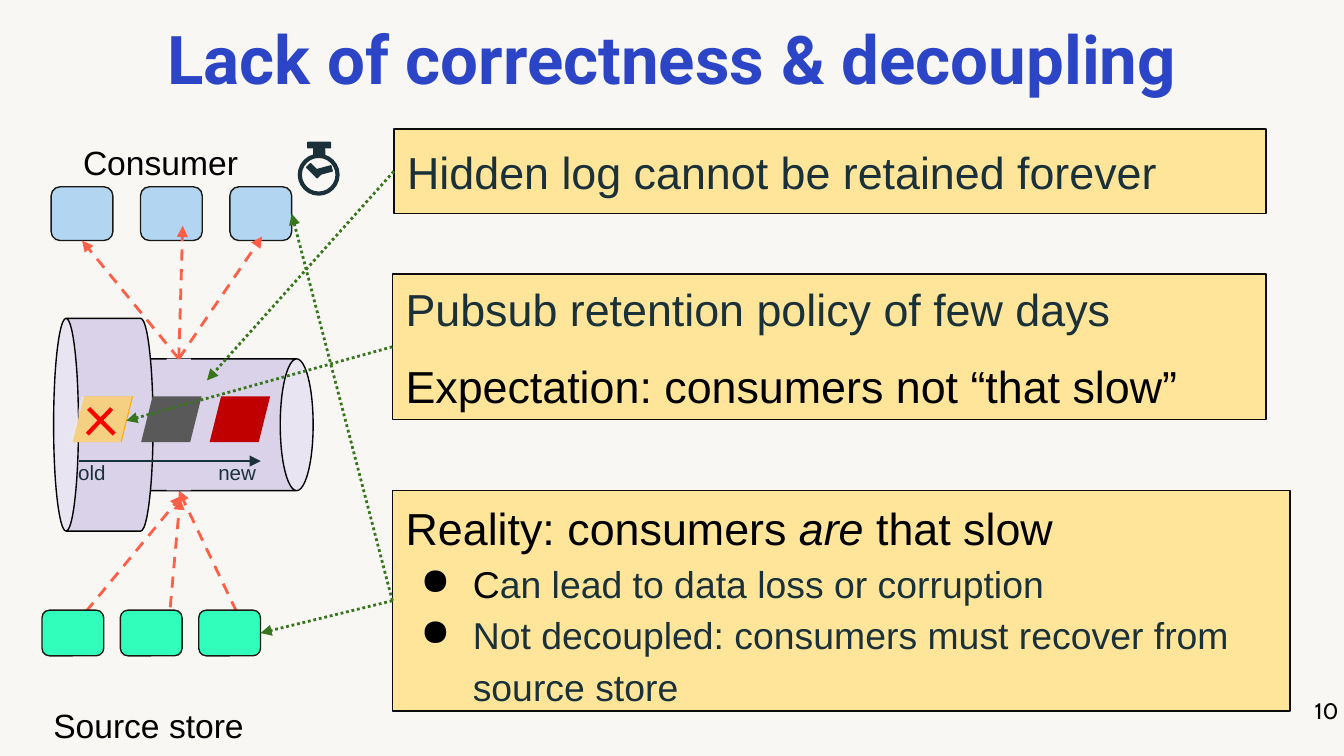
"""Build a slide on the missing correctness and decoupling of a pubsub log."""
from lxml.etree import SubElement
from pptx import Presentation
from pptx.dml.color import RGBColor
from pptx.enum.dml import MSO_LINE_DASH_STYLE as DASH
from pptx.enum.shapes import MSO_CONNECTOR, MSO_SHAPE as SHAPE
from pptx.enum.text import MSO_ANCHOR as ANCHOR, PP_ALIGN as ALIGN
from pptx.oxml.ns import qn
from pptx.util import Pt

PAPER = RGBColor(0xF9, 0xF7, 0xF4)
BLUE = RGBColor(0x2C, 0x45, 0xC6)
BLACK = RGBColor(0, 0, 0)
NAVY = RGBColor(0x1B, 0x31, 0x39)
OUTLINE = RGBColor(0x1A, 0x19, 0x14)
BOX_LINE = RGBColor(0x0C, 0x0C, 0x0C)
YELLOW = RGBColor(0xFF, 0xE5, 0x99)
SKY = RGBColor(0xB2, 0xD5, 0xF2)
MINT = RGBColor(0x32, 0xFE, 0xBC)
LILAC = RGBColor(0xD9, 0xD2, 0xE9)
CORAL = RGBColor(0xFF, 0x5F, 0x46)
GREEN = RGBColor(0x38, 0x76, 0x1D)
RED = RGBColor(0xFF, 0, 0)
VEIL = RGBColor(0xEE, 0xED, 0xE9)
RECORD_FILLS = [RGBColor(0xFF, 0xAB, 0), RGBColor(0x59, 0x59, 0x59), RGBColor(0xC0, 0, 0)]

HEAD = dict(size=Pt(24))
ITEM = dict(size=Pt(20))
TITLE = [dict(runs=[("Lack of correctness & decoupling",
                     dict(name="Roboto", size=Pt(36), bold=True, color=BLUE))],
              format=dict(alignment=ALIGN.CENTER, line_spacing=0.9))]
NOTES = [
    ((211, 69.1, 467.3, 45.4), [
        dict(runs=[("Hidden log cannot be retained forever", HEAD | dict(color=NAVY))])]),
    ((210.2, 146.9, 468, 77.8), [
        dict(runs=[("Pubsub retention policy of few days", HEAD | dict(color=NAVY))]),
        dict(runs=[("Expectation: consumers not “that slow”", HEAD)],
             format=dict(line_spacing=1.15, space_before=Pt(8)))]),
    ((210.2, 262.8, 481, 118.1), [
        dict(runs=[("Reality: consumers ", HEAD), ("are ", HEAD | dict(italic=True)),
                   ("that slow", HEAD)], format=dict(line_spacing=1.15)),
        dict(runs=[("C", ITEM), ("an lead to data loss or corruption", ITEM | dict(color=NAVY))],
             format=dict(line_spacing=1.15), bullet=True),
        dict(runs=[("Not decoupled: consumers must recover from source store",
                    ITEM | dict(color=NAVY))],
             format=dict(line_spacing=1.15), bullet=True)]),
]
LABELS = [
    ("Consumer", (1.4, 69.1, 169.2, 28.8), 3.6, dict(size=Pt(18)), 1.15),
    ("Source store", (0.7, 370.8, 157.7, 28.8), 3.6, dict(size=Pt(18)), 1.15),
    ("old", (12.2, 239.8, 74.2, 28.1), 7.2, dict(size=Pt(11), color=NAVY), 1),
    ("new", (90, 239.8, 74.2, 28.1), 7.2, dict(size=Pt(11), color=NAVY), 1),
]
PUBLISH_ARROWS = [((89.3, 346.3), (96.5, 267.1)), ((46.1, 327.6), (97.2, 265.7)),
                  ((126.7, 327.6), (95.8, 262.8))]
DELIVER_FROM = (95.8, 192.2)
DELIVER_TO = [(43.9, 129.6), (97.9, 121), (140.4, 126.7)]
CANS = [((84.2, 179.3, 70.6, 96.5), 90), ((-1.6, 200.9, 114, 53.3), 270)]
STOPWATCH_PARTS = [((168.8, 90, 9, 2.9), 344.9), ((164.2, 90, 7.9, 2.9), 224.6),
                   ((164.9, 76.3, 12.2, 2.9), 359.8), ((168.5, 77.8, 5, 5.8), 269.7)]
CROSS = [((47.5, 218.9), (61.2, 232.6)), ((59.8, 218.9), (46.8, 232.6))]

presentation = Presentation()
presentation.slide_width, presentation.slide_height = Pt(720), Pt(405)
slide = presentation.slides.add_slide(presentation.slide_layouts[5])
slide.background.fill.solid()
slide.background.fill.fore_color.rgb = PAPER


def add_shape(kind, frame, fill=None, line=None, width=0.75, rotation=0):
    shape = slide.shapes.add_shape(kind, *map(Pt, frame))
    shape.shadow.inherit = False
    shape.rotation = rotation
    if fill is None:
        shape.fill.background()
    else:
        shape.fill.solid()
        shape.fill.fore_color.rgb = fill
    if line is None:
        shape.line.fill.background()
    else:
        shape.line.color.rgb, shape.line.width = line, Pt(width)
    return shape


def add_line(start, end, color, width=1.5, dash=None, arrow=True):
    line = slide.shapes.add_connector(MSO_CONNECTOR.STRAIGHT, *map(Pt, start + end))
    line.line.color.rgb, line.line.width = color, Pt(width)
    if dash:
        line.line.dash_style = dash
    if arrow:
        SubElement(line.line._get_or_add_ln(), qn("a:tailEnd"), type="triangle")
    SubElement(line._element.spPr, qn("a:effectLst"))
    return line


def write(shape, paragraphs, insets=(0, 0), anchor=ANCHOR.TOP):
    frame = shape.text_frame
    across, down = map(Pt, insets)
    settings = dict(word_wrap=True, vertical_anchor=anchor, margin_left=across,
                    margin_right=across, margin_top=down, margin_bottom=down)
    for key, value in settings.items():
        setattr(frame, key, value)
    for index, content in enumerate(paragraphs):
        paragraph = frame.add_paragraph() if index else frame.paragraphs[0]
        if content.get("bullet"):
            properties = paragraph._p.get_or_add_pPr()
            properties.set("marL", str(Pt(36)))
            properties.set("indent", str(Pt(-28)))
            color = SubElement(properties, qn("a:buClr"))
            SubElement(color, qn("a:srgbClr"), val=str(BLACK))
            SubElement(properties, qn("a:buChar"), char="●")
        for key, value in (dict(alignment=ALIGN.LEFT) | content.get("format", {})).items():
            setattr(paragraph, key, value)
        for text, style in content["runs"]:
            run = paragraph.add_run()
            run.text = text
            style = dict(name="Arial", color=BLACK) | style
            run.font.color.rgb = style.pop("color")
            for key, value in style.items():
                setattr(run.font, key, value)


def add_row(kind, left, step, top, size, fills, line=None):
    return [add_shape(kind, (left + step * index, top, *size), fill, line)
            for index, fill in enumerate(fills)]


title = slide.shapes.title
title.left, title.top, title.width, title.height = map(Pt, (24.5, 10.8, 671, 45.4))
write(title, TITLE, anchor=ANCHOR.MIDDLE)

for start, end in PUBLISH_ARROWS:
    add_line(start, end, CORAL, dash=DASH.DASH)
consumers = add_row(SHAPE.ROUNDED_RECTANGLE, 27.4, 47.9, 100.1, (33.1, 28.8), [SKY] * 3, OUTLINE)
sources = add_row(SHAPE.ROUNDED_RECTANGLE, 22.5, 42, 326.9, (33.1, 24.5), [MINT] * 3, OUTLINE)

for frame, rotation in CANS:
    add_shape(SHAPE.CAN, frame, LILAC, BLACK, rotation=rotation)
add_shape(SHAPE.RECTANGLE, (89.3, 192.2, 13, 70.6), LILAC)

for end in DELIVER_TO:
    arrow = add_line(DELIVER_FROM, end, CORAL, dash=DASH.DASH)
    if end == DELIVER_TO[0]:
        arrow.end_connect(consumers[0], 2)

add_row(SHAPE.PARALLELOGRAM, 38.9, 36.7, 212.4, (32.4, 24.5), RECORD_FILLS)
veil = add_shape(SHAPE.PARALLELOGRAM, (37.6, 212.4, 33.1, 24.5), VEIL)
SubElement(veil._element.spPr.find(".//" + qn("a:srgbClr")), qn("a:alpha"), val="56000")

boxes = []
for frame, paragraphs in NOTES:
    box = add_shape(SHAPE.RECTANGLE, frame, YELLOW, BOX_LINE)
    write(box, paragraphs, (7.2, 7.2), ANCHOR.MIDDLE)
    boxes.append(box)
log_box, policy_box, reality_box = boxes

for box, end, target in [(log_box, (110.9, 203.8), None), (policy_box, (67.7, 225.4), None),
                         (reality_box, (140.4, 339.1), sources[2]),
                         (reality_box, (157, 115.2), consumers[2])]:
    pointer = add_line((210.2, 100), end, GREEN, dash=DASH.ROUND_DOT)
    pointer.begin_connect(box, 1)
    if target:
        pointer.end_connect(target, 3)

add_shape(SHAPE.OVAL, (160.6, 83.5, 20.2, 20.2), line=NAVY, width=2.25)
for frame, rotation in STOPWATCH_PARTS:
    add_shape(SHAPE.RECTANGLE, frame, NAVY, NAVY, rotation=rotation)
for start, end in CROSS:
    add_line(start, end, RED, 2.25, arrow=False)
add_line((42.5, 247), (139.7, 247), NAVY, 0.75)

for text, frame, inset, style, spacing in LABELS:
    write(slide.shapes.add_textbox(*map(Pt, frame)),
          [dict(runs=[(text, style)], format=dict(alignment=ALIGN.CENTER, line_spacing=spacing))],
          (7.2, inset))
write(slide.shapes.add_textbox(*map(Pt, (673.9, 373.7, 43.2, 31))),
      [dict(runs=[("10", dict(name="Cabin", size=Pt(12)))], format=dict(alignment=ALIGN.RIGHT))])

presentation.save("out.pptx")
